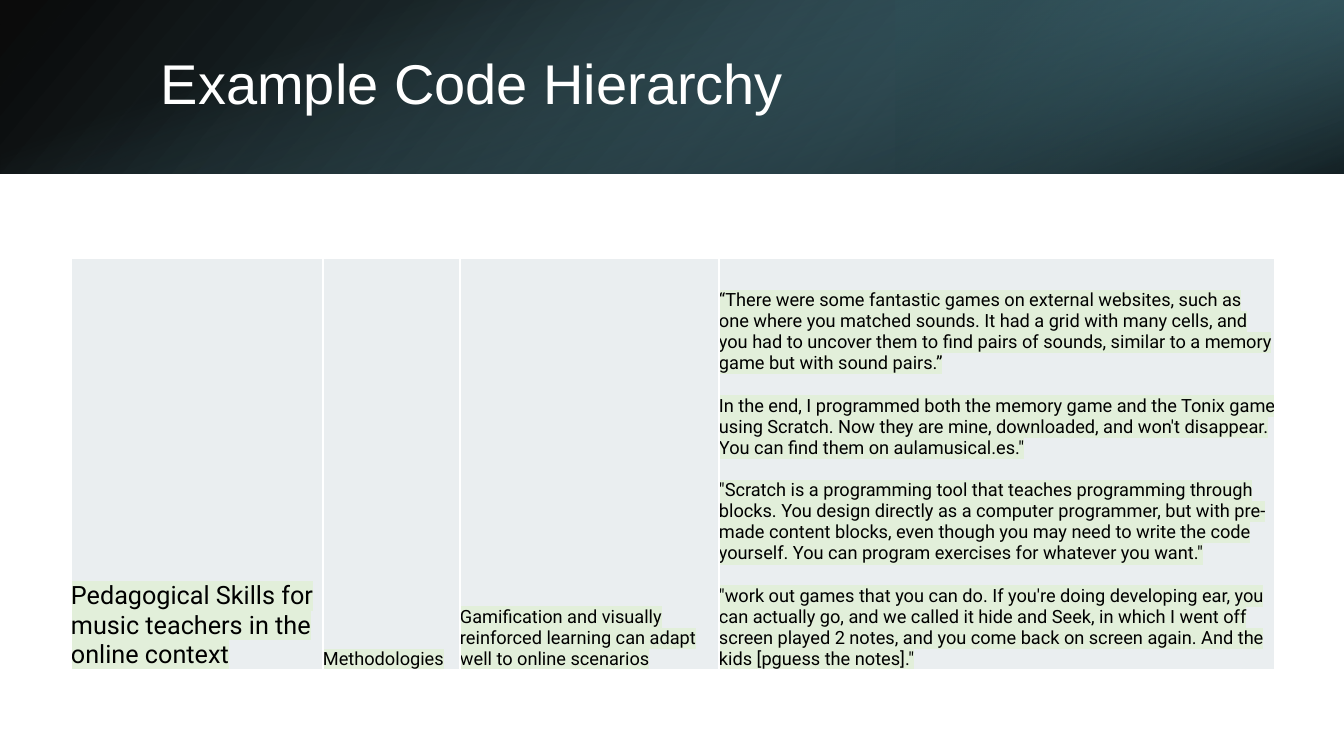
import pptx
import pptx.util
import pptx.dml.color
import pptx.enum.shapes
import pptx.enum.text
import pptx.oxml
import pptx.oxml.ns

COLORS = {"white": "FFFFFF", "black": "000000", "cell": "EAEEF0", "mark": "E2EFDA",
          "teal": "5992A1", "mid": "436D79", "deep": "2C4950"}
NS = pptx.oxml.ns.nsdecls("a")


def px(n):
    return round(n * 914400 / 100.8)


def rgb(name):
    return pptx.dml.color.RGBColor.from_string(COLORS[name])


prs = pptx.Presentation()
prs.slide_width, prs.slide_height = px(1344), px(756)
s = prs.slides.add_slide(prs.slide_layouts[6])

# Header band: three layered gradients
# box, rotation, flipped, angle, stops (position, colour, opacity)
bands = [
    ((0, 0, 1344, 174), 0, True, 140, [(0, "black", 96), (100, "mid", 100)]),
    ((896, 0, 448, 174), 180, True, 320, [(19, "deep", 68), (100, "teal", 79)]),
    ((585, -585, 174, 1344), 90, False, 340, [(23, "teal", 0), (99, "black", 74)]),
]
for box, rotation, flipped, angle, stops in bands:
    sp = s.shapes.add_shape(pptx.enum.shapes.MSO_SHAPE.RECTANGLE, *map(px, box))
    sp.shadow.inherit = False
    sp.line.fill.background()
    sp.rotation = rotation
    if flipped:
        sp._element.spPr.find(pptx.oxml.ns.qn("a:xfrm")).set("flipH", "1")
    gs = "".join(
        f'<a:gs pos="{pos * 1000}"><a:srgbClr val="{COLORS[color]}">'
        f'<a:alpha val="{alpha * 1000}"/></a:srgbClr></a:gs>'
        for pos, color, alpha in stops)
    grad = pptx.oxml.parse_xml(
        f'<a:gradFill {NS} rotWithShape="1"><a:gsLst>{gs}</a:gsLst>'
        f'<a:lin ang="{angle * 60000}" scaled="0"/></a:gradFill>')
    sp._element.spPr.find(pptx.oxml.ns.qn("a:prstGeom")).addnext(grad)

# Title
tf = s.shapes.add_textbox(px(151), px(38), px(1204), px(97)).text_frame
tf.word_wrap = True
tf.vertical_anchor = pptx.enum.text.MSO_ANCHOR.MIDDLE
p = tf.paragraphs[0]
p.text = "Example Code Hierarchy"
p.line_spacing = 0.9
p.font.size = pptx.util.Pt(40)
p.font.name = "Arial"
p.font.color.rgb = rgb("white")

# Code hierarchy: column width, text size, paragraphs
columns = [
    (252, 18, ["Pedagogical Skills for music teachers in the online context"]),
    (137, 13, ["Methodologies"]),
    (259, 13, ["Gamification and visually reinforced learning can adapt well to online scenarios"]),
    (556, 13, [
        "“There were some fantastic games on external websites, such as one where you matched "
        "sounds. It had a grid with many cells, and you had to uncover them to find pairs of "
        "sounds, similar to a memory game but with sound pairs.”",
        "In the end, I programmed both the memory game and the Tonix game using Scratch. Now "
        "they are mine, downloaded, and won't disappear. You can find them on aulamusical.es.\"",
        "\"Scratch is a programming tool that teaches programming through blocks. You design "
        "directly as a computer programmer, but with pre-made content blocks, even though you "
        "may need to write the code yourself. You can program exercises for whatever you want.\"",
        "\"work out games that you can do. If you're doing developing ear, you can actually go, "
        "and we called it hide and Seek, in which I went off screen played 2 notes, and you come "
        "back on screen again. And the kids [pguess the notes].\"",
    ]),
]
table = s.shapes.add_table(1, len(columns), px(71), px(258), px(1204), px(412)).table
table.first_row = table.horz_banding = False
for i, (width, size, paragraphs) in enumerate(columns):
    table.columns[i].width = px(width)
    cell = table.cell(0, i)
    cell.margin_left = cell.margin_right = cell.margin_top = cell.margin_bottom = 0
    cell.vertical_anchor = pptx.enum.text.MSO_ANCHOR.BOTTOM
    cell.fill.solid()
    cell.fill.fore_color.rgb = rgb("cell")
    for k, side in enumerate("LRTB"):
        cell._tc.tcPr.insert(k, pptx.oxml.parse_xml(
            f'<a:ln{side} {NS} w="12700"><a:solidFill><a:srgbClr val="{COLORS["white"]}"/>'
            f'</a:solidFill></a:ln{side}>'))
    tf = cell.text_frame
    for k, text in enumerate(paragraphs):
        p = tf.add_paragraph() if k else tf.paragraphs[0]
        if k:
            p.space_before = pptx.util.Pt(15)
        p.font.size = pptx.util.Pt(size)
        p.font.name = "Roboto"
        p.font.color.rgb = rgb("black")
        r = p.add_run()
        r.text = text
        r._r.get_or_add_rPr().append(pptx.oxml.parse_xml(
            f'<a:highlight {NS}><a:srgbClr val="{COLORS["mark"]}"/></a:highlight>'))

prs.save("out.pptx")
